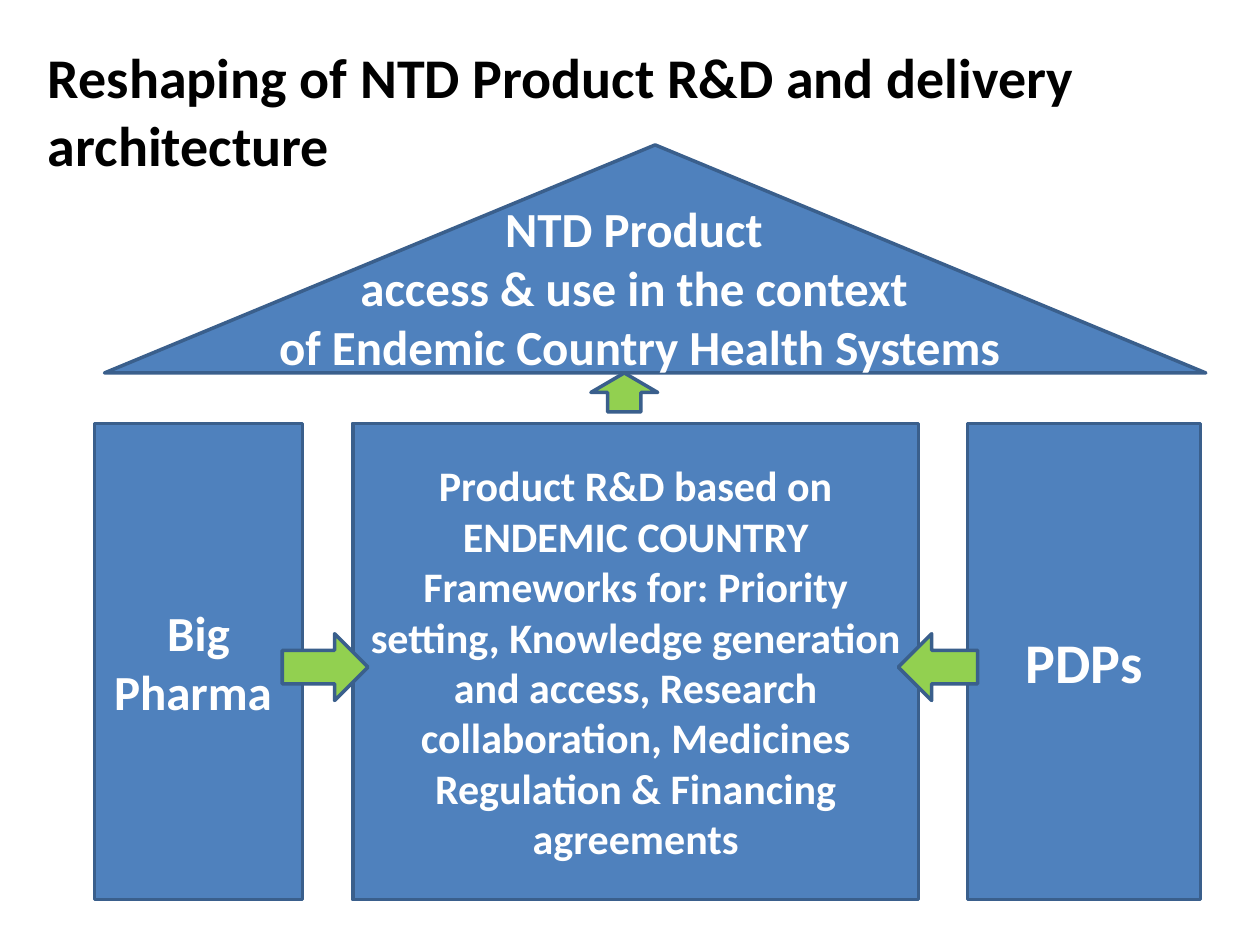
"""Build the slide on reshaping NTD product R&D and delivery architecture."""
from pptx import Presentation
from pptx.dml.color import RGBColor
from pptx.enum.shapes import MSO_SHAPE as Shape
from pptx.enum.text import MSO_ANCHOR as Anchor, PP_ALIGN as Align
from pptx.util import Pt

PX = 9144
BLUE, GREEN, OUTLINE = "4F81BD", "92D050", "3A5F8C"
WHITE, BLACK = "FFFFFF", "000000"


def write(shape, lines, size, color, align, anchor):
    frame = shape.text_frame
    frame.text = "\n".join(lines)
    frame.word_wrap = True
    frame.vertical_anchor = anchor
    for paragraph in frame.paragraphs:
        paragraph.alignment = align
        for run in paragraph.runs:
            run.font.name = "Calibri"
            run.font.size = Pt(size)
            run.font.bold = True
            run.font.color.rgb = RGBColor.from_string(color)


def add_block(kind, left, top, width, height, fill):
    shape = slide.shapes.add_shape(kind, left * PX, top * PX, width * PX, height * PX)
    shape.shadow.inherit = False
    shape.fill.solid()
    shape.fill.fore_color.rgb = RGBColor.from_string(fill)
    shape.line.color.rgb = RGBColor.from_string(OUTLINE)
    shape.line.width = Pt(2)
    return shape


presentation = Presentation()
presentation.slide_width = 1000 * PX
presentation.slide_height = 750 * PX
slide = presentation.slides.add_slide(presentation.slide_layouts[5])

title = slide.shapes.title
title.left, title.top, title.width, title.height = 28 * PX, 29 * PX, 953 * PX, 118 * PX
write(title, ["Reshaping of NTD Product R&D and delivery architecture"],
      32, BLACK, Align.LEFT, Anchor.TOP)

add_block(Shape.ISOSCELES_TRIANGLE, 83, 115, 874, 181, BLUE)
roof_label = slide.shapes.add_textbox(43 * PX, 153 * PX, 929 * PX, 151 * PX)
roof_lines = ["NTD Product ", "access & use in the context ", "of Endemic Country Health Systems"]
write(roof_label, roof_lines, 28, WHITE, Align.CENTER, Anchor.TOP)

pillars = [
    (75, 165, 28, ["Big Pharma "]),
    (280, 449, 24, [
        "Product R&D based on ENDEMIC COUNTRY",
        "Frameworks for: Priority setting, Knowledge generation and access, "
        "Research collaboration, Medicines Regulation & Financing agreements",
    ]),
    (768, 185, 32, ["PDPs"]),
]
for left, width, size, lines in pillars:
    pillar = add_block(Shape.RECTANGLE, left, 336, width, 378, BLUE)
    write(pillar, lines, size, WHITE, Align.CENTER, Anchor.MIDDLE)

arrows = [
    (Shape.RIGHT_ARROW, 224, 503, 68, 53),
    (Shape.LEFT_ARROW, 713, 503, 63, 53),
    (Shape.UP_ARROW, 469, 296, 53, 31),
]
for kind, left, top, width, height in arrows:
    add_block(kind, left, top, width, height, GREEN)

presentation.save("out.pptx")
